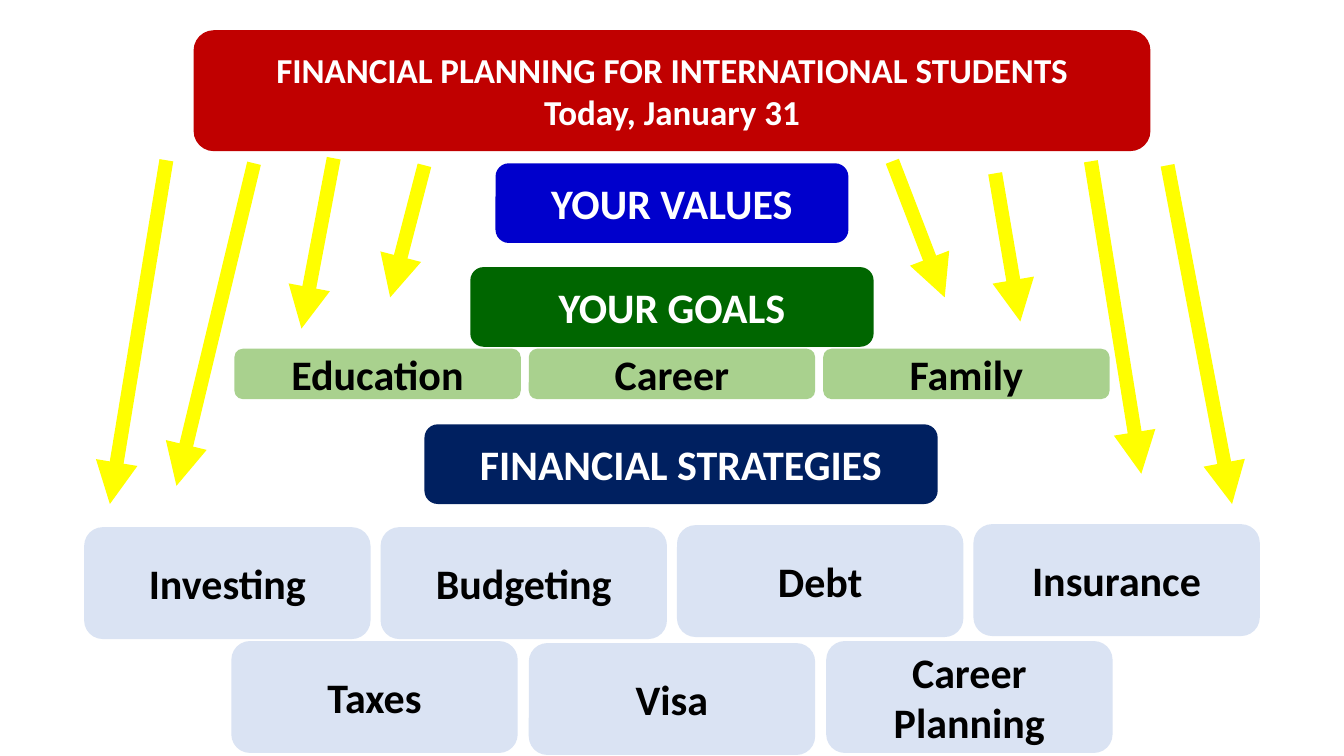
from lxml.etree import SubElement
from pptx import Presentation
from pptx.dml.color import RGBColor
from pptx.enum.shapes import MSO_CONNECTOR as Connector, MSO_SHAPE as Shape
from pptx.enum.text import MSO_ANCHOR as Anchor, PP_ALIGN as Align
from pptx.oxml.ns import qn
from pptx.util import Inches, Pt

WHITE = RGBColor(0xFF, 0xFF, 0xFF)
BLACK = RGBColor(0x00, 0x00, 0x00)
RED = RGBColor(0xC0, 0x00, 0x00)
BLUE = RGBColor(0x00, 0x00, 0xCC)
GREEN = RGBColor(0x00, 0x66, 0x00)
LIGHT_GREEN = RGBColor(0xA9, 0xD1, 0x8E)
NAVY = RGBColor(0x00, 0x20, 0x60)
PALE_BLUE = RGBColor(0xDA, 0xE3, 0xF3)
YELLOW = RGBColor(0xFF, 0xFF, 0x00)

PAGE_WIDTH, PAGE_HEIGHT = 13.33, 7.5
CENTER = PAGE_WIDTH / 2
TILE_WIDTH = 2.84

BANNERS = [
    (["FINANCIAL PLANNING FOR INTERNATIONAL STUDENTS", "Today, January 31"],
     CENTER, 0.3, 9.49, 1.2, RED, 25),
    (["YOUR VALUES"], CENTER, 1.62, 3.5, 0.79, BLUE, 30),
    (["YOUR GOALS"], CENTER, 2.65, 4, 0.79, GREEN, 30),
    (["FINANCIAL STRATEGIES"], CENTER + 0.09, 4.21, 5.09, 0.79, NAVY, 30),
]

TILE_ROWS = [
    ([("Education", 3.46), ("Career", 3.46), ("Family", 3.46)],
     0.08, 0.5, LIGHT_GREEN),
    ([("Investing", 5.23), ("Budgeting", 5.23), ("Debt", 5.21), ("Insurance", 5.2)],
     0.1, 1.11, PALE_BLUE),
    ([("Taxes", 6.36), ("Visa", 6.38), ("Career Planning", 6.36)],
     0.11, 1.11, PALE_BLUE),
]

ARROWS = [
    ((1.65, 1.59), (1.09, 5)),
    ((2.52, 1.62), (1.75, 4.82)),
    ((3.31, 1.57), (2.99, 3.26)),
    ((4.21, 1.64), (3.87, 2.95)),
    ((8.85, 1.6), (9.37, 2.95)),
    ((9.87, 1.72), (10.12, 3.19)),
    ((10.82, 1.6), (11.32, 4.7)),
    ((11.58, 1.64), (12.22, 5)),
]


def add_box(page, lines, center, top, width, height, fill, size, color):
    box = page.shapes.add_shape(
        Shape.ROUNDED_RECTANGLE, Inches(center - width / 2), Inches(top),
        Inches(width), Inches(height))
    box.shadow.inherit = False
    box.fill.solid()
    box.fill.fore_color.rgb = fill
    box.line.fill.background()
    frame = box.text_frame
    frame.word_wrap = True
    frame.vertical_anchor = Anchor.MIDDLE
    font_format = {"name": "Calibri", "size": Pt(size), "bold": True}
    for index, line in enumerate(lines):
        para = frame.add_paragraph() if index else frame.paragraphs[0]
        para.alignment = Align.CENTER
        span = para.add_run()
        span.text = line
        for name, value in font_format.items():
            setattr(span.font, name, value)
        span.font.color.rgb = color


def add_arrow(page, start, end):
    points = [Inches(length) for length in start + end]
    arrow = page.shapes.add_connector(Connector.STRAIGHT, *points)
    arrow.line.color.rgb = YELLOW
    arrow.line.width = Pt(10)
    SubElement(arrow.line._get_or_add_ln(), qn("a:tailEnd"), type="triangle")
    SubElement(arrow._element.spPr, qn("a:effectLst"))


def main():
    deck = Presentation()
    deck.slide_width = Inches(PAGE_WIDTH)
    deck.slide_height = Inches(PAGE_HEIGHT)
    page = deck.slides.add_slide(deck.slide_layouts[6])
    for banner in BANNERS:
        add_box(page, *banner, WHITE)
    for tiles, gap, height, fill in TILE_ROWS:
        for column, (label, top) in enumerate(tiles):
            offset = column - (len(tiles) - 1) / 2
            center = CENTER + offset * (TILE_WIDTH + gap)
            add_box(page, [label], center, top, TILE_WIDTH, height, fill, 30, BLACK)
    for start, end in ARROWS:
        add_arrow(page, start, end)
    deck.save("out.pptx")


if __name__ == "__main__":
    main()
